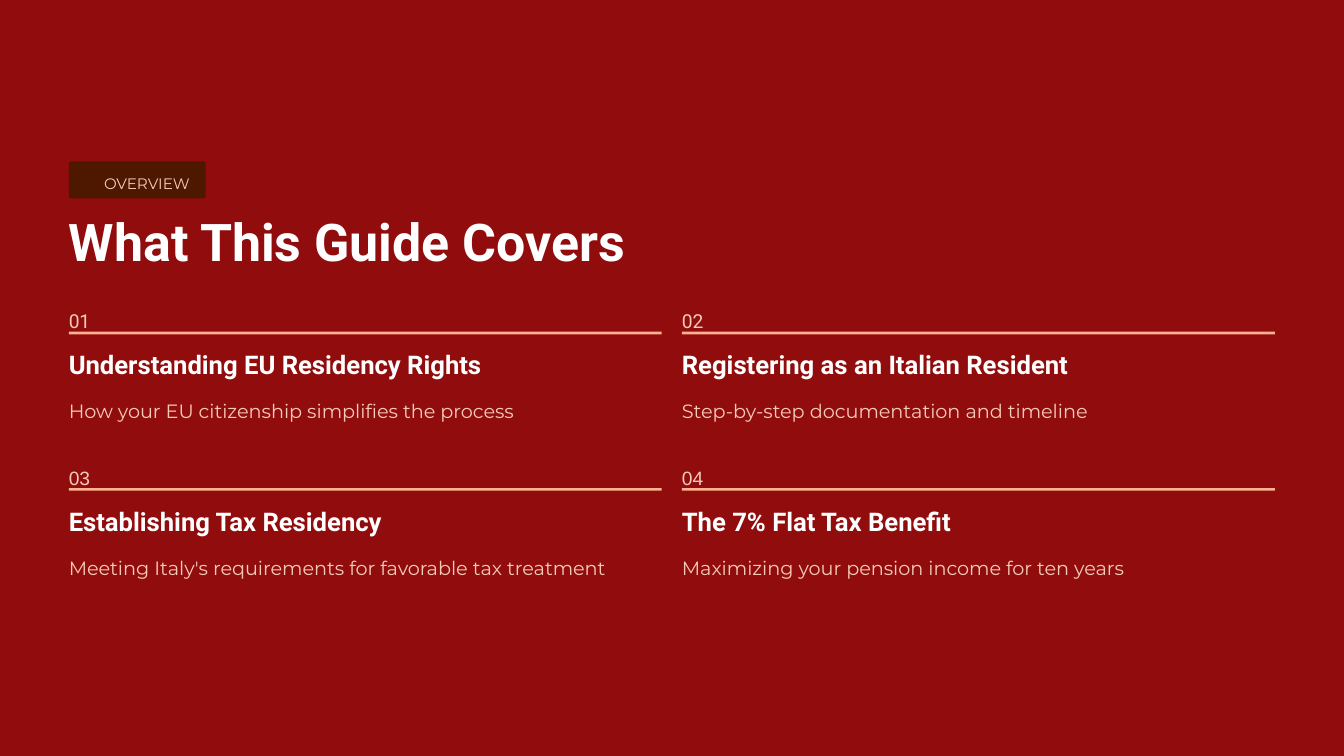
from pptx import Presentation
from pptx.dml.color import RGBColor
from pptx.enum import shapes, text
from pptx.util import Cm, Pt

COLORS = {
    "red": "910D0D",
    "brown": "4D1700",
    "peach": "FFB393",
    "pale": "F4CAB8",
    "white": "FFFFFF",
}
PAGE_W, PAGE_H = 40.64, 22.86
LEFT, TOP = 2.08, 9.12
COL_STEP, ROW_STEP = 18.54, 4.73
WIDTH = 17.93
TOPICS = [
    ("01", "Roboto", "Understanding EU Residency Rights", 13.72,
     "How your EU citizenship simplifies the process"),
    ("02", "Roboto", "Registering as an Italian Resident", 12.83,
     "Step-by-step documentation and timeline"),
    ("03", "Arial", "Establishing Tax Residency", 10.34,
     "Meeting Italy's requirements for favorable tax treatment"),
    ("04", "Arial", "The 7% Flat Tax Benefit", 8.89,
     "Maximizing your pension income for ten years"),
]


def color(name):
    return RGBColor.from_string(COLORS[name])


def add_block(slide, kind, x, y, w, h, fill):
    block = slide.shapes.add_shape(kind, Cm(x), Cm(y), Cm(w), Cm(h))
    block.shadow.inherit = False
    block.fill.solid()
    block.fill.fore_color.rgb = color(fill)
    block.line.fill.background()
    return block


def add_label(slide, x, y, w, h, words, size, lead, face, ink, bold=False):
    frame = slide.shapes.add_textbox(Cm(x), Cm(y), Cm(w), Cm(h)).text_frame
    frame.margin_left = frame.margin_right = 0
    frame.margin_top = frame.margin_bottom = 0
    frame.word_wrap = False
    frame.vertical_anchor = text.MSO_ANCHOR.TOP
    para = frame.paragraphs[0]
    para.line_spacing = Pt(lead)
    run = para.add_run()
    run.text = words
    run.font.size = Pt(size)
    run.font.name = face
    run.font.bold = bold
    run.font.color.rgb = color(ink)


def add_badge(slide):
    badge = add_block(slide, shapes.MSO_SHAPE.ROUNDED_RECTANGLE,
                      LEFT, 4.88, 4.14, 1.12, "brown")
    badge.adjustments[0] = 0.06
    add_label(slide, 3.15, 5.05, 2.72, 0.76, "OVERVIEW",
              13, 21.5, "Montserrat", "pale")


def add_topic(slide, x, y, number, face, title, width, detail):
    add_label(slide, x, y, 0.72, 0.74, number, 16.5, 26.5, face, "pale")
    add_block(slide, shapes.MSO_SHAPE.RECTANGLE,
              x, y + 0.91, WIDTH, 0.08, "peach")
    add_label(slide, x, y + 1.38, width, 0.99, title,
              22, 28, "Roboto", "white", True)
    add_label(slide, x, y + 2.73, WIDTH, 0.94, detail,
              16.5, 26.5, "Montserrat", "pale")


def main():
    deck = Presentation()
    deck.slide_width, deck.slide_height = Cm(PAGE_W), Cm(PAGE_H)
    slide = deck.slides.add_slide(deck.slide_layouts[6])
    add_block(slide, shapes.MSO_SHAPE.RECTANGLE, 0, 0, PAGE_W, PAGE_H, "red")
    add_badge(slide)
    add_label(slide, LEFT, 6.25, 18.14, 1.98, "What This Guide Covers",
              44.5, 56, "Roboto", "white", True)
    for i, topic in enumerate(TOPICS):
        row, col = divmod(i, 2)
        add_topic(slide, LEFT + col * COL_STEP, TOP + row * ROW_STEP, *topic)
    deck.save("out.pptx")


if __name__ == "__main__":
    main()
